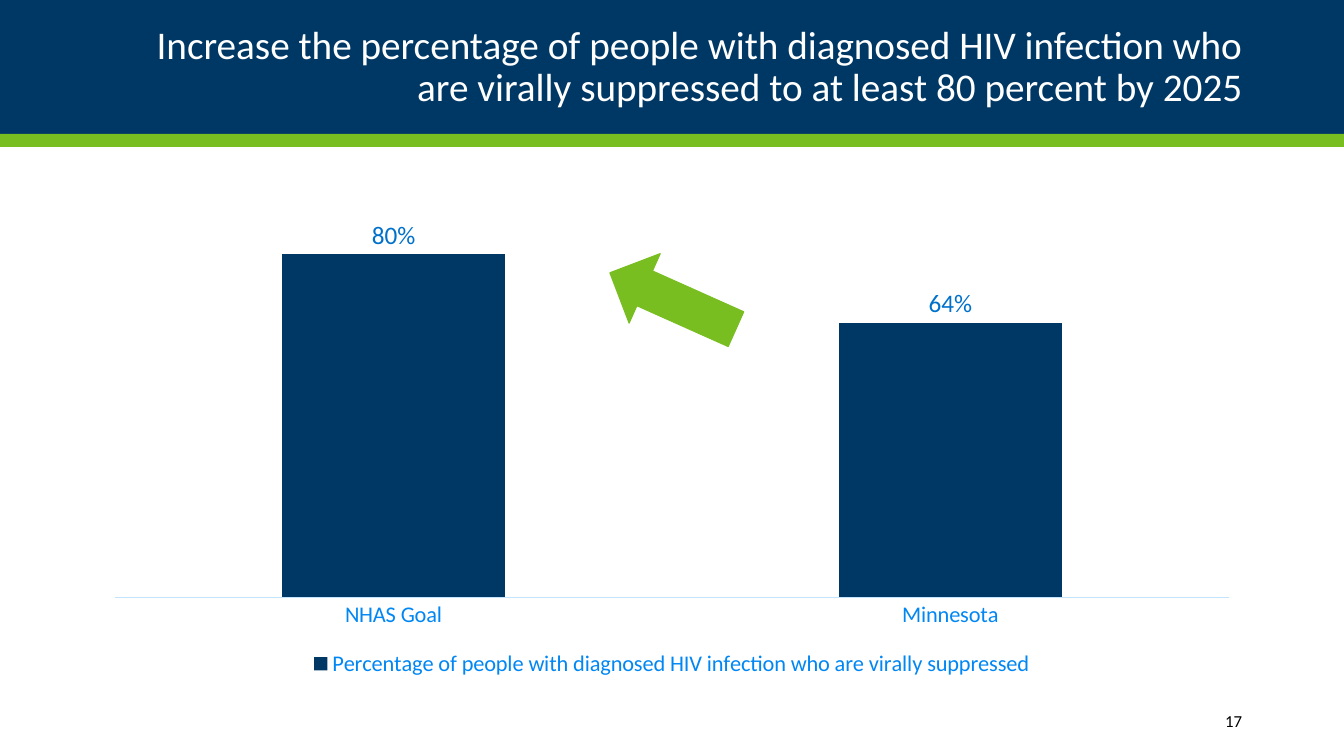
from pptx import Presentation
from pptx.chart.data import CategoryChartData
from pptx.dml.color import RGBColor
from pptx.enum.chart import XL_CHART_TYPE, XL_LABEL_POSITION, XL_LEGEND_POSITION, XL_TICK_MARK
from pptx.enum.shapes import MSO_SHAPE
from pptx.enum.text import MSO_ANCHOR, PP_ALIGN
from pptx.util import Emu, Pt

WIDTH, HEIGHT = 1344, 756
NAVY, GREEN = "003865", "78BE21"


def px(n):
    return Emu(round(n * 12192000 / WIDTH))


def rgb(value):
    return RGBColor.from_string(value)


class Deck:
    """Holds the style and the current slide, and adds elements to it."""

    font = "Calibri"

    def __init__(self):
        self.prs = Presentation()
        self.prs.slide_width, self.prs.slide_height = px(WIDTH), px(HEIGHT)
        self.s = self.prs.slides.add_slide(self.prs.slide_layouts[6])

    def style(self, font, size, color):
        font.name, font.size = self.font, Pt(size)
        font.color.rgb = rgb(color)

    def shape(self, kind, x, y, w, h, fill, line=None, rotation=0):
        sp = self.s.shapes.add_shape(kind, *map(px, (x, y, w, h)))
        sp.shadow.inherit = False
        sp.rotation = rotation
        sp.fill.solid()
        sp.fill.fore_color.rgb = rgb(fill)
        if line:
            sp.line.color.rgb = rgb(line)
            sp.line.width = Pt(0.85)
        else:
            sp.line.fill.background()

    def text(self, text, x, y, w, h, size=12, color="000000", align=PP_ALIGN.RIGHT, spacing=1.0):
        tf = self.s.shapes.add_textbox(*map(px, (x, y, w, h))).text_frame
        tf.word_wrap = True
        tf.vertical_anchor = MSO_ANCHOR.MIDDLE
        p = tf.paragraphs[0]
        p.alignment, p.line_spacing = align, spacing
        r = p.add_run()
        r.text = text
        self.style(r.font, size, color)

    def columns(self, name, values, x, y, w, h, top):
        data = CategoryChartData(number_format="0%")
        data.categories = list(values)
        data.add_series(name, list(values.values()))
        chart = self.s.shapes.add_chart(
            XL_CHART_TYPE.COLUMN_CLUSTERED, *map(px, (x, y, w, h)), data).chart
        self.style(chart.font, 10, NAVY)
        chart.has_title = False
        chart.has_legend = True
        chart.legend.position = XL_LEGEND_POSITION.BOTTOM
        chart.legend.include_in_layout = False
        self.style(chart.legend.font, 16, "0087F4")

        axis = chart.category_axis
        axis.major_tick_mark = axis.minor_tick_mark = XL_TICK_MARK.NONE
        axis.format.line.color.rgb = rgb("C2E4FF")
        axis.format.line.width = Pt(0.75)
        self.style(axis.tick_labels.font, 16, "0087F4")
        axis = chart.value_axis
        axis.minimum_scale, axis.maximum_scale = 0, top
        axis.has_major_gridlines = False
        axis.visible = False

        plot = chart.plots[0]
        plot.gap_width = 150
        plot.vary_by_categories = False
        fill = plot.series[0].format.fill
        fill.solid()
        fill.fore_color.rgb = rgb(NAVY)
        labels = plot.series[0].data_labels
        labels.show_value = True
        labels.position = XL_LABEL_POSITION.OUTSIDE_END
        labels.number_format, labels.number_format_is_linked = "0%", False
        self.style(labels.font, 18, "0071CB")

    def save(self):
        self.prs.save("out.pptx")


def main():
    deck = Deck()
    deck.shape(MSO_SHAPE.RECTANGLE, 0, 0, WIDTH, 134, NAVY)
    deck.shape(MSO_SHAPE.RECTANGLE, 0, 134, WIDTH, 13, GREEN)
    deck.text("Increase the percentage of people with diagnosed HIV infection who "
              "are virally suppressed to at least 80 percent by 2025",
              92, 17, 1160, 101, size=28, color="FFFFFF", spacing=0.9)
    deck.columns("Percentage of people with diagnosed HIV infection who are virally suppressed",
                 {"NHAS Goal": 0.8, "Minnesota": 0.64}, 92, 202, 1160, 480, top=0.9)
    deck.text("17", 1091, 701, 161, 40)
    deck.shape(MSO_SHAPE.LEFT_ARROW, 604, 263, 138, 76, GREEN, line=GREEN, rotation=24.1)
    deck.save()


if __name__ == "__main__":
    main()
